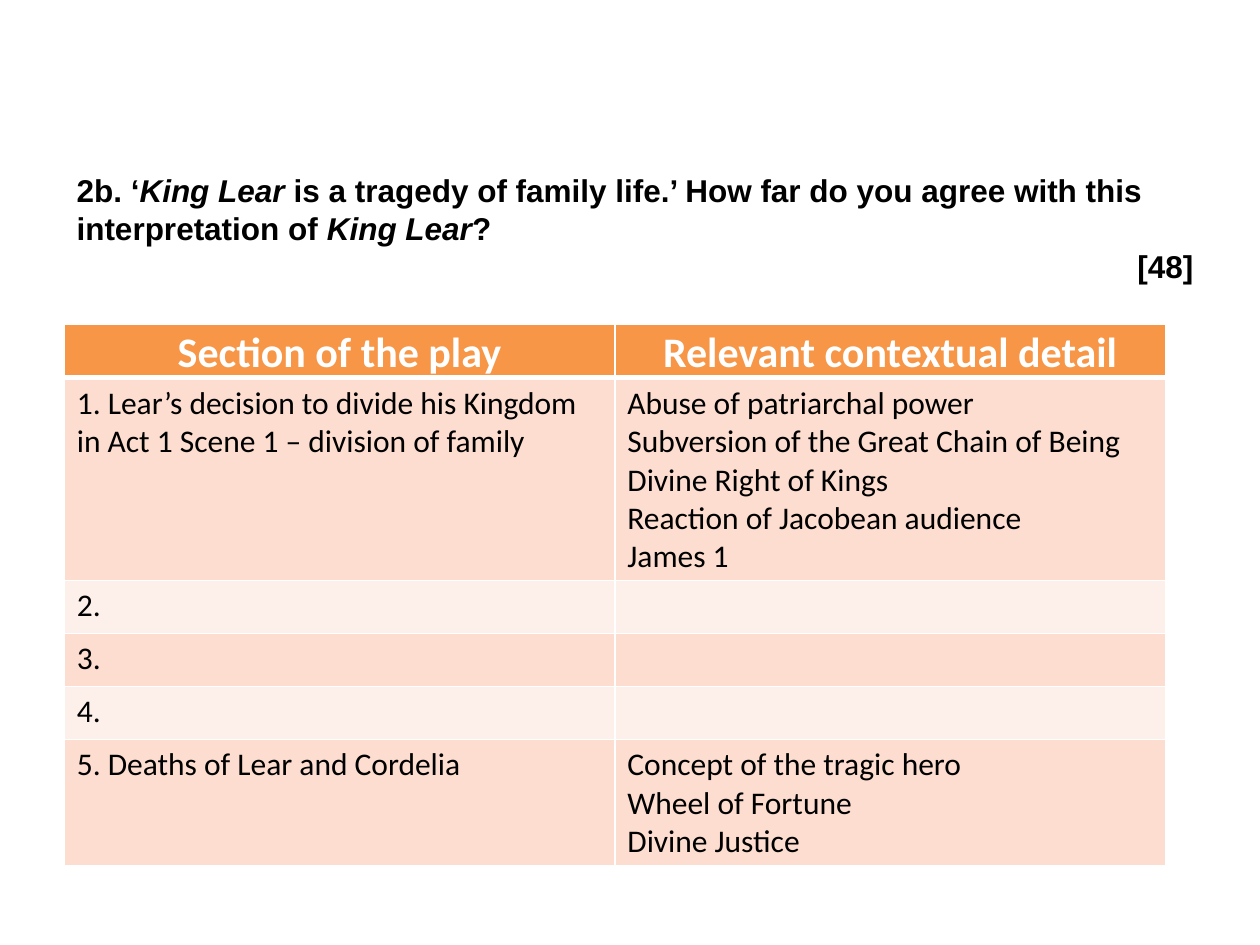
import pptx
import pptx.dml.color
import pptx.enum.text
import pptx.oxml
import pptx.oxml.ns
import pptx.util
from pptx.util import Inches

BLACK = pptx.dml.color.RGBColor(0x00, 0x00, 0x00)
WHITE = pptx.dml.color.RGBColor(0xFF, 0xFF, 0xFF)
ORANGE = pptx.dml.color.RGBColor(0xF7, 0x96, 0x46)
BANDS = (pptx.dml.color.RGBColor(0xFC, 0xDD, 0xCF),
         pptx.dml.color.RGBColor(0xFD, 0xEF, 0xE9))
ALIGN = pptx.enum.text.PP_ALIGN

HEADINGS = ("Section of the play", "Relevant contextual detail")
SECTIONS = [
    ("1. Lear’s decision to divide his Kingdom in Act 1 Scene 1 – division of family",
     ["Abuse of patriarchal power", "Subversion of the Great Chain of Being",
      "Divine Right of Kings", "Reaction of Jacobean audience", "James 1"]),
    ("2.", []),
    ("3.", []),
    ("4.", []),
    ("5. Deaths of Lear and Cordelia",
     ["Concept of the tragic hero", "Wheel of Fortune", "Divine Justice"]),
]
ROW_HEIGHTS = (0.42, 1.61, 0.42, 0.42, 0.42, 0.99)
COLUMN_WIDTH = 4.37


def add_run(p, text, font, size, color, bold=False, italic=False):
    r = p.add_run()
    r.text = text
    r.font.name = font
    r.font.size = pptx.util.Pt(size)
    r.font.color.rgb = color
    r.font.bold = bold
    r.font.italic = italic


def add_question(s):
    tf = s.shapes.add_textbox(Inches(0.51), Inches(1.31), Inches(9.06), Inches(1.01)).text_frame
    tf.word_wrap = True
    tf.auto_size = pptx.enum.text.MSO_AUTO_SIZE.SHAPE_TO_FIT_TEXT
    p = tf.paragraphs[0]
    for text, italic in (
        ("2b. ‘", False),
        ("King Lear", True),
        (" is a tragedy of family life.’ How far do you agree with this interpretation of ", False),
        ("King Lear", True),
        ("?", False),
    ):
        add_run(p, text, "Arial", 18, BLACK, bold=True, italic=italic)
    marks = tf.add_paragraph()
    marks.alignment = ALIGN.RIGHT
    add_run(marks, "[48]", "Arial", 18, BLACK, bold=True)


def style_cell(cell, color, top=1, bottom=1):
    """Give the cell white borders, in points, and then its fill."""
    tc_pr = cell._tc.get_or_add_tcPr()
    for side, width in (("L", 1), ("R", 1), ("T", top), ("B", bottom)):
        tc_pr.append(pptx.oxml.parse_xml(
            f'<a:ln{side} {pptx.oxml.ns.nsdecls("a")} w="{pptx.util.Pt(width)}">'
            f'<a:solidFill><a:srgbClr val="{WHITE}"/></a:solidFill></a:ln{side}>'))
    cell.fill.solid()
    cell.fill.fore_color.rgb = color


def fill_heading(cell, text):
    style_cell(cell, ORANGE, bottom=3)
    cell.margin_left = cell.margin_right = Inches(0.07)
    cell.margin_top = cell.margin_bottom = 0
    p = cell.text_frame.paragraphs[0]
    p.alignment = ALIGN.CENTER
    p.line_spacing = 1.07
    add_run(p, text, "Calibri", 24, WHITE, bold=True)


def fill_body(cell, lines, color, top):
    style_cell(cell, color, top=top)
    tf = cell.text_frame
    for i, line in enumerate(lines):
        p = tf.add_paragraph() if i else tf.paragraphs[0]
        add_run(p, line, "Calibri", 18, BLACK)


def add_sections_table(s):
    table = s.shapes.add_table(
        len(ROW_HEIGHTS), len(HEADINGS), Inches(0.51), Inches(2.57),
        Inches(COLUMN_WIDTH * len(HEADINGS)), Inches(sum(ROW_HEIGHTS))).table
    for row, height in zip(table.rows, ROW_HEIGHTS):
        row.height = Inches(height)
    for column, heading in enumerate(HEADINGS):
        table.columns[column].width = Inches(COLUMN_WIDTH)
        fill_heading(table.cell(0, column), heading)
    for i, (section, details) in enumerate(SECTIONS):
        for column, lines in enumerate(([section], details)):
            fill_body(table.cell(i + 1, column), lines, BANDS[i % 2], top=1 if i else 3)


def main():
    prs = pptx.Presentation()
    prs.slide_width, prs.slide_height = Inches(10), Inches(7.5)
    s = prs.slides.add_slide(prs.slide_layouts[6])
    add_question(s)
    add_sections_table(s)
    prs.save("out.pptx")


if __name__ == "__main__":
    main()
